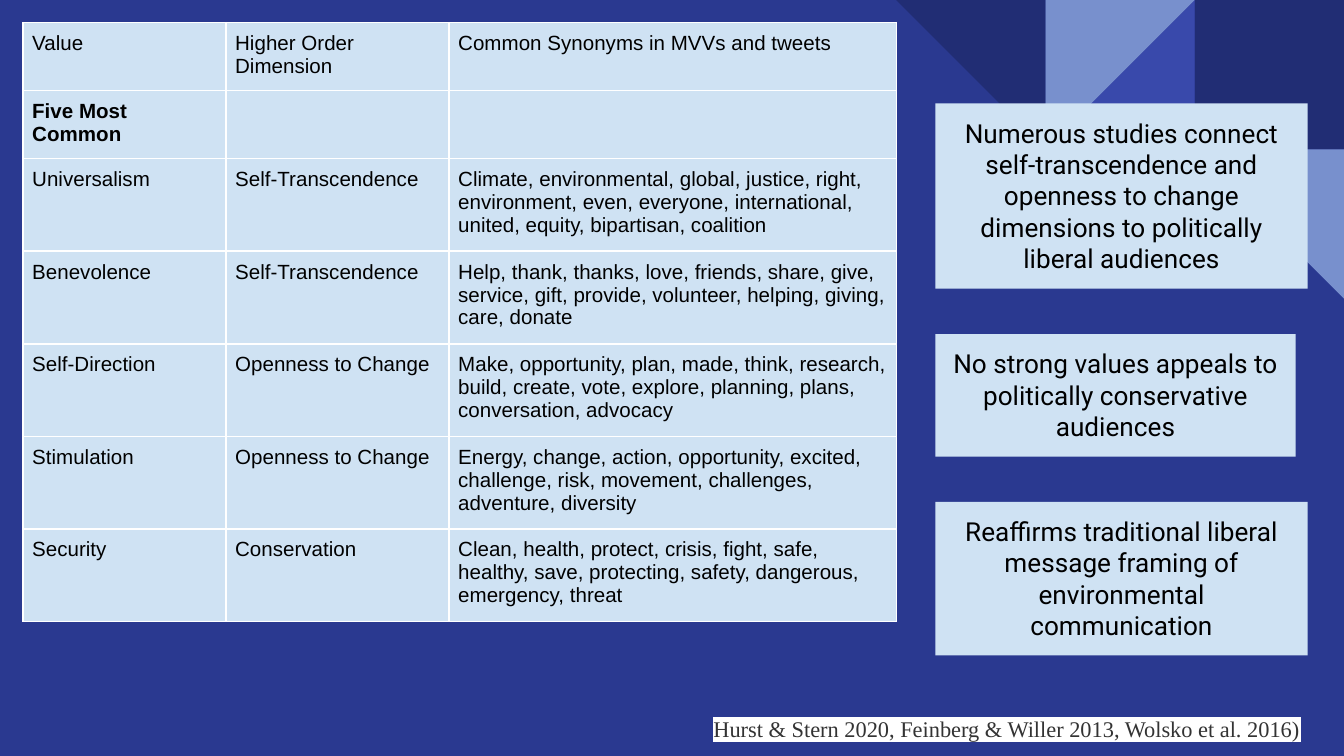
"""Build a slide that tabulates common values beside three takeaway cards."""
from dataclasses import dataclass

from lxml.etree import SubElement
from pptx import Presentation
from pptx.dml.color import RGBColor
from pptx.enum.shapes import MSO_SHAPE
from pptx.enum.text import MSO_ANCHOR, MSO_AUTO_SIZE, PP_ALIGN
from pptx.oxml import parse_xml
from pptx.oxml.ns import nsdecls, qn
from pptx.util import Inches, Pt

WIDTH = 10
HEIGHT = WIDTH * 9 / 16
TILE = WIDTH / 9
NAVY, PERIWINKLE, INDIGO = "212D74", "7890CD", "3949AB"
BACKGROUND, PALE, BLACK, GREY, WHITE = "2A3990", "CFE2F3", "000000", "333333", "FFFFFF"


@dataclass
class Tile:
    """A decorative square or corner triangle, placed by grid column and row."""

    column: int
    row: int
    color: str
    kind: MSO_SHAPE = MSO_SHAPE.RIGHT_TRIANGLE
    turn: int = 0


@dataclass
class Card:
    """A takeaway, with its width and height as percentages of the slide."""

    text: str
    width: float
    height: float


@dataclass
class TextStyle:
    """The look of one run of text."""

    font: str
    size: int
    color: str = BLACK
    bold: bool = False


TILES = [
    Tile(8, 0, NAVY, MSO_SHAPE.RECTANGLE),
    Tile(7, 0, INDIGO, turn=270),
    Tile(7, 0, PERIWINKLE, turn=90),
    Tile(6, 0, NAVY, turn=180),
    Tile(8, 1, PERIWINKLE, turn=180),
]
CARD_LEFT, CARD_TOP, CARD_GAP = 69.6, 13.7, 6
CARDS = [
    Card("Numerous studies connect self-transcendence and openness to change "
         "dimensions to politically liberal audiences", 27.7, 24.5),
    Card("No strong values appeals to politically conservative audiences", 26.8, 16.2),
    Card("Reaffirms traditional liberal message framing of environmental communication",
         27.7, 20.3),
]
COLUMN_SHARES = [15.1, 16.6, 33.3]
ROW_SHARES = [9] * 2 + [12.25] * 5
VALUES = [
    ("Value", "Higher Order Dimension", "Common Synonyms in MVVs and tweets"),
    ("Five Most Common", "", ""),
    ("Universalism", "Self-Transcendence",
     "Climate, environmental, global, justice, right, environment, even, everyone, "
     "international, united, equity, bipartisan, coalition"),
    ("Benevolence", "Self-Transcendence",
     "Help, thank, thanks, love, friends, share, give, service, gift, provide, "
     "volunteer, helping, giving, care, donate"),
    ("Self-Direction", "Openness to Change",
     "Make, opportunity, plan, made, think, research, build, create, vote, explore, "
     "planning, plans, conversation, advocacy"),
    ("Stimulation", "Openness to Change",
     "Energy, change, action, opportunity, excited, challenge, risk, movement, "
     "challenges, adventure, diversity"),
    ("Security", "Conservation",
     "Clean, health, protect, crisis, fight, safe, healthy, save, protecting, safety, "
     "dangerous, emergency, threat"),
]


def across(percent: float) -> int:
    """Turn a percentage of the slide's width into a length."""
    return Inches(WIDTH * percent / 100)


def down(percent: float) -> int:
    """Turn a percentage of the slide's height into a length."""
    return Inches(HEIGHT * percent / 100)


def paint(fill, color: str) -> None:
    """Make a fill solid in a hex colour."""
    fill.solid()
    fill.fore_color.rgb = RGBColor.from_string(color)


def add_span(para, text: str, style: TextStyle):
    """Add one styled run to a paragraph."""
    span = para.add_run()
    span.text = text
    span.font.name = style.font
    span.font.size = Pt(style.size)
    span.font.bold = style.bold
    paint(span.font.fill, style.color)
    return span


def highlight(span, color: str) -> None:
    """Put a marker colour behind a run."""
    marker = parse_xml(f'<a:highlight {nsdecls("a")}><a:srgbClr val="{color}"/></a:highlight>')
    span.font._element.find(qn("a:solidFill")).addnext(marker)


def frame_text(box):
    """Give a box even insets and wrapped text, and return its first paragraph."""
    frame = box.text_frame
    frame.word_wrap = True
    frame.auto_size = MSO_AUTO_SIZE.SHAPE_TO_FIT_TEXT
    frame.vertical_anchor = MSO_ANCHOR.TOP
    frame.margin_left = frame.margin_right = Inches(0.1)
    frame.margin_top = frame.margin_bottom = Inches(0.1)
    return frame.paragraphs[0]


def add_block(page, kind: MSO_SHAPE, area: tuple, color: str):
    """Add a flat shape without a line or shadow."""
    box = page.shapes.add_shape(kind, *area)
    box.shadow.inherit = False
    paint(box.fill, color)
    box.line.fill.background()
    return box


def add_tile(page, tile: Tile) -> None:
    """Draw one tile of the corner pattern."""
    side = Inches(TILE)
    area = (Inches(tile.column * TILE), Inches(tile.row * TILE), side, side)
    add_block(page, tile.kind, area, tile.color).rotation = tile.turn


def add_cards(page, cards: list[Card]) -> None:
    """Stack the takeaway cards with equal gaps."""
    top = CARD_TOP
    for card in cards:
        area = (across(CARD_LEFT), down(top), across(card.width), down(card.height))
        para = frame_text(add_block(page, MSO_SHAPE.RECTANGLE, area, PALE))
        para.alignment = PP_ALIGN.CENTER
        add_span(para, card.text, TextStyle("Roboto", 14))
        top += card.height + CARD_GAP


def format_cell(cell, text: str, bold: bool) -> None:
    """Fill, border and write one table cell."""
    cell.margin_left = cell.margin_right = Inches(0.07)
    cell.margin_top = cell.margin_bottom = Inches(0.07)
    properties = cell._tc.get_or_add_tcPr()
    for side in ("lnL", "lnR", "lnT", "lnB"):
        edge = SubElement(properties, qn(f"a:{side}"), w=str(Pt(1)))
        SubElement(SubElement(edge, qn("a:solidFill")), qn("a:srgbClr"), val=WHITE)
    paint(cell.fill, PALE)
    if text:
        add_span(cell.text_frame.paragraphs[0], text, TextStyle("Arial", 11, bold=bold))


def add_value_table(page) -> None:
    """Draw the table of values, dimensions and synonyms."""
    area = (across(1.7), down(3), across(sum(COLUMN_SHARES)), down(sum(ROW_SHARES)))
    table = page.shapes.add_table(len(VALUES), len(COLUMN_SHARES), *area).table
    table.first_row = table.horz_banding = False
    for column, share in zip(table.columns, COLUMN_SHARES):
        column.width = across(share)
    for row, share, texts in zip(table.rows, ROW_SHARES, VALUES):
        row.height = down(share)
        for cell, text in zip(row.cells, texts):
            format_cell(cell, text, bold=text == "Five Most Common")


def add_citation(page) -> None:
    """Write the highlighted references at the foot of the slide."""
    box = page.shapes.add_textbox(across(52.1), down(92.8), across(47.9), down(7.2))
    span = add_span(frame_text(box),
                    "Hurst & Stern 2020, Feinberg & Willer 2013, Wolsko et al. 2016)",
                    TextStyle("Times New Roman", 12, GREY))
    highlight(span, WHITE)


def main() -> None:
    """Build and save the deck."""
    deck = Presentation()
    deck.slide_width, deck.slide_height = Inches(WIDTH), Inches(HEIGHT)
    page = deck.slides.add_slide(deck.slide_layouts[6])
    paint(page.background.fill, BACKGROUND)
    for tile in TILES:
        add_tile(page, tile)
    add_value_table(page)
    add_cards(page, CARDS)
    add_citation(page)
    deck.save("out.pptx")


if __name__ == "__main__":
    main()
